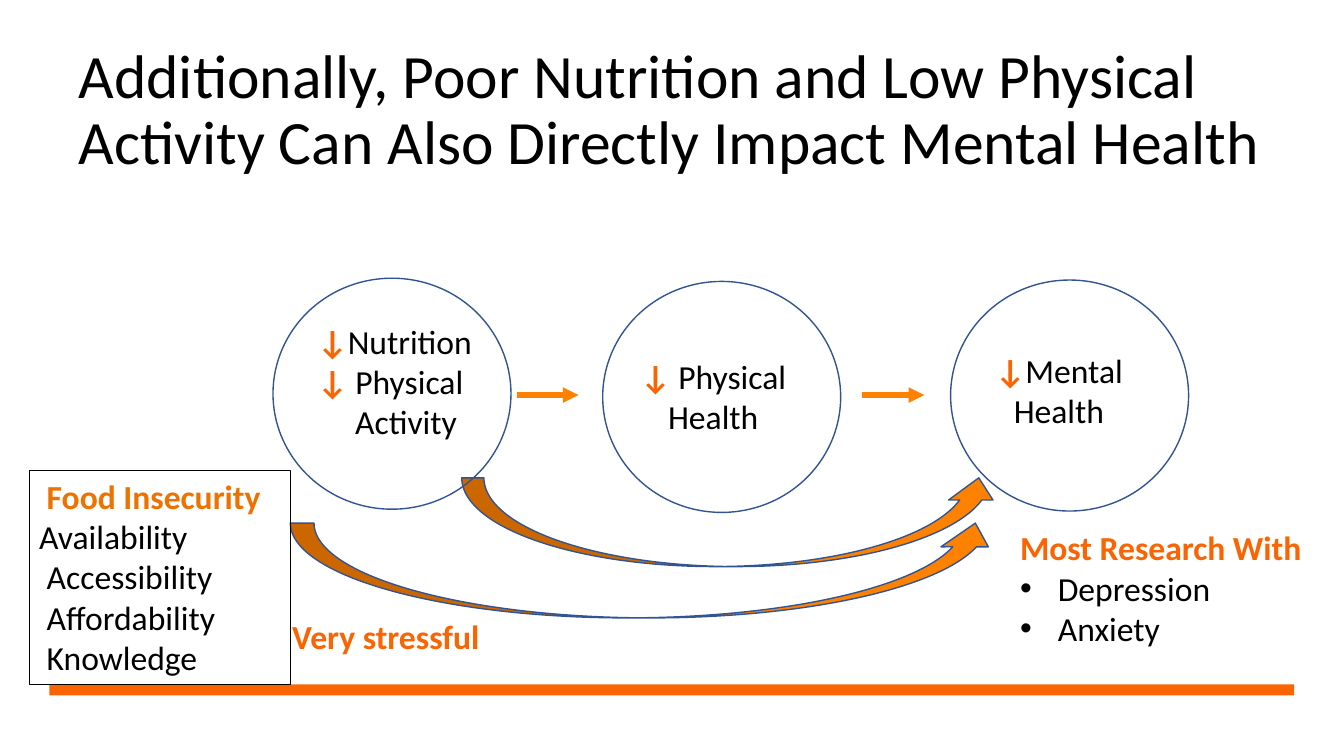
import pptx
import pptx.util
import pptx.dml.color
import pptx.enum.shapes
import pptx.enum.text
import pptx.oxml
import pptx.oxml.ns

Pt = pptx.util.Pt
SHAPES = pptx.enum.shapes.MSO_SHAPE
ALIGN = pptx.enum.text.PP_ALIGN
ANCHOR = pptx.enum.text.MSO_ANCHOR

ORANGE, AMBER, DARK_AMBER = "FA6402", "FF8100", "EE7200"
BLACK, BLUE = "000000", "325491"
FONT = "Calibri"
BODY_SIZE = 24

HEADLINE = ("Additionally, Poor Nutrition and Low Physical Activity "
            "Can Also Directly Impact Mental Health")
HEADLINE_BOX = (49, 27.4, 873.4, 104.4)
BAR_BOX = (35.3, 488.9, 889.2, 7.9)

CIRCLE_SIZE = (170, 165)
STAGES = [
    {"circle": (195, 198.7), "label": (219.6, 225.4, 164.9, 94.3), "align": ALIGN.LEFT,
     "lines": [(0, [("↓", ORANGE), ("Nutrition", BLACK)]),
               (0, [("↓", ORANGE), (" Physical", BLACK)]),
               (27, [("Activity", BLACK)])]},
    {"circle": (430.5, 201), "label": (445, 250.6, 128.9, 65.4), "align": ALIGN.CENTER,
     "lines": [(0, [("↓ ", ORANGE), ("Physical Health", BLACK)])]},
    {"circle": (679, 200), "label": (679, 246.2, 154.8, 65.4), "align": ALIGN.CENTER,
     "lines": [(0, [("↓", ORANGE), ("Mental", BLACK)]),
               (0, [("Health", BLACK)])]},
]
STEP_Y = 282.2
STEPS = [(369.4, 413.3), (615.6, 660.2)]
DIRECT_PATHS = [(329.8, 341.3, 385.2, 63.4), (207.4, 373.7, 506.2, 67.7)]

STRESS_BOX = (201.6, 436.3, 188.6, 36)
STRESS_LINES = [(0, [("Very stressful", ORANGE)])]

INSECURITY_BOX = (20.9, 336.2, 186.5, 152.6)
INSECURITY_LINES = [
    (5.4, [("Food Insecurity", DARK_AMBER)]),
    (0, [("Availability", BLACK)]),
    (5.4, [("Accessibility", BLACK)]),
    (5.4, [("Affordability", BLACK)]),
    (5.4, [("Knowledge", BLACK)]),
]

RESEARCH_BOX = (721.4, 373, 226, 94.3)
RESEARCH_LINES = [
    (0, [("Most Research With", ORANGE)]),
    (27, [("Depression", BLACK)]),
    (27, [("Anxiety", BLACK)]),
]


def color(code):
    return pptx.dml.color.RGBColor.from_string(code)


def place(part, box):
    part.left, part.top, part.width, part.height = map(Pt, box)


def draw(slide, preset, box, fill=None, line=None, weight=1):
    part = slide.shapes.add_shape(preset, *map(Pt, box))
    part.shadow.inherit = False
    if fill:
        part.fill.solid()
        part.fill.fore_color.rgb = color(fill)
    else:
        part.fill.background()
    if line:
        part.line.color.rgb = color(line)
        part.line.width = Pt(weight)
    else:
        part.line.fill.background()
    return part


def write(part, lines, align=ALIGN.LEFT, bulleted=False):
    frame = part.text_frame
    frame.word_wrap = True
    frame.auto_size = pptx.enum.text.MSO_AUTO_SIZE.NONE
    frame.vertical_anchor = ANCHOR.TOP
    for index, (indent, pieces) in enumerate(lines):
        paragraph = frame.add_paragraph() if index else frame.paragraphs[0]
        paragraph.alignment = align
        paragraph.space_before = Pt(0)
        has_bullet = bulleted and indent > 0
        properties = paragraph._p.get_or_add_pPr()
        properties.set("marL", str(Pt(indent)))
        properties.set("indent", str(-Pt(indent) if has_bullet else 0))
        bullet = '<a:buChar %s char="•"/>' if has_bullet else "<a:buNone %s/>"
        properties.append(pptx.oxml.parse_xml(bullet % pptx.oxml.ns.nsdecls("a")))
        for words, ink in pieces:
            run = paragraph.add_run()
            run.text = words
            run.font.name = FONT
            run.font.size = Pt(BODY_SIZE)
            run.font.bold = ink != BLACK
            run.font.color.rgb = color(ink)


def add_step(slide, start, end):
    step = slide.shapes.add_connector(
        pptx.enum.shapes.MSO_CONNECTOR.STRAIGHT, Pt(start), Pt(STEP_Y), Pt(end), Pt(STEP_Y))
    step.line.color.rgb = color(AMBER)
    step.line.width = Pt(3.75)
    namespace = pptx.oxml.ns.nsdecls("a")
    step.line._get_or_add_ln().append(
        pptx.oxml.parse_xml(f'<a:tailEnd {namespace} type="triangle"/>'))
    step._element.spPr.append(pptx.oxml.parse_xml(f"<a:effectLst {namespace}/>"))


def main():
    deck = pptx.Presentation()
    deck.slide_width, deck.slide_height = Pt(960), Pt(540)
    slide = deck.slides.add_slide(deck.slide_layouts[1])

    headline = slide.shapes.title
    place(headline, HEADLINE_BOX)
    headline.text_frame.text = HEADLINE
    headline.text_frame.auto_size = pptx.enum.text.MSO_AUTO_SIZE.NONE
    headline.text_frame.vertical_anchor = ANCHOR.MIDDLE
    sentence = headline.text_frame.paragraphs[0]
    sentence.alignment = ALIGN.LEFT
    sentence.line_spacing = 0.9
    sentence.runs[0].font.name = FONT
    sentence.runs[0].font.size = Pt(44)
    sentence.runs[0].font.color.rgb = color(BLACK)

    research = slide.placeholders[1]
    place(research, RESEARCH_BOX)
    write(research, RESEARCH_LINES, bulleted=True)

    draw(slide, SHAPES.RECTANGLE, BAR_BOX, fill=ORANGE)
    for path_box in DIRECT_PATHS:
        draw(slide, SHAPES.CURVED_UP_ARROW, path_box, fill=AMBER, line=BLUE)
    for stage in STAGES:
        draw(slide, SHAPES.OVAL, stage["circle"] + CIRCLE_SIZE, line=BLUE)
        label = slide.shapes.add_textbox(*map(Pt, stage["label"]))
        write(label, stage["lines"], stage["align"])
    for start, end in STEPS:
        add_step(slide, start, end)

    stress = slide.shapes.add_textbox(*map(Pt, STRESS_BOX))
    write(stress, STRESS_LINES)
    insecurity = draw(slide, SHAPES.RECTANGLE, INSECURITY_BOX, line=BLACK, weight=0.75)
    write(insecurity, INSECURITY_LINES)

    deck.save("out.pptx")


if __name__ == "__main__":
    main()
